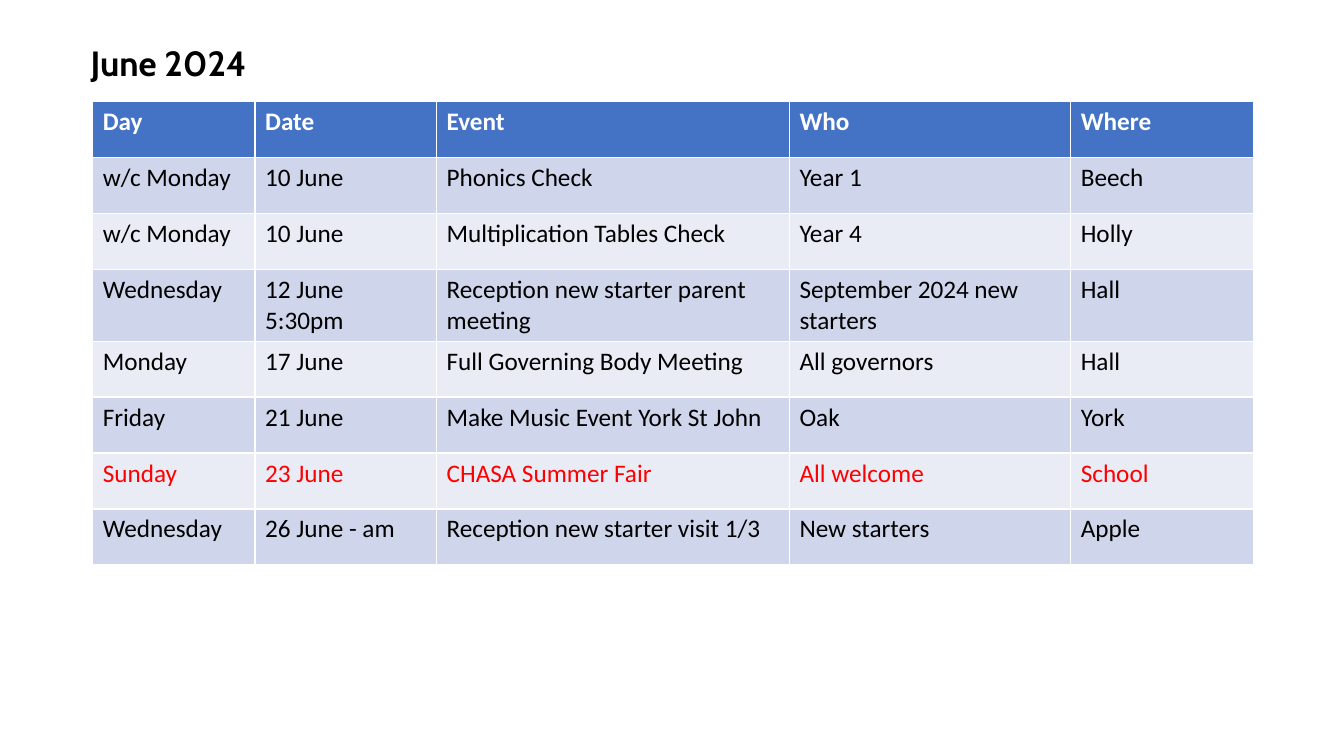
from pptx import Presentation
from pptx.dml.color import RGBColor
from pptx.enum.text import MSO_AUTO_SIZE
from pptx.util import Inches, Pt

BLACK = RGBColor(0x00, 0x00, 0x00)
WHITE = RGBColor(0xFF, 0xFF, 0xFF)
RED = RGBColor(0xFF, 0x00, 0x00)
HEADER_BLUE = RGBColor(0x44, 0x72, 0xC4)
BAND_DARK = RGBColor(0xCF, 0xD5, 0xEA)
BAND_LIGHT = RGBColor(0xE9, 0xEB, 0xF5)

COLUMN_WIDTHS = [1.61, 1.8, 3.5, 2.79, 1.81]
EVENTS = [
    ("Day", "Date", "Event", "Who", "Where"),
    ("w/c Monday", "10 June", "Phonics Check", "Year 1", "Beech"),
    ("w/c Monday", "10 June", "Multiplication Tables Check", "Year 4", "Holly"),
    ("Wednesday", "12 June\n5:30pm", "Reception new starter parent meeting",
     "September 2024 new starters", "Hall"),
    ("Monday", "17 June", "Full Governing Body Meeting", "All governors", "Hall"),
    ("Friday", "21 June", "Make Music Event York St John", "Oak", "York"),
    ("Sunday", "23 June", "CHASA Summer Fair", "All welcome", "School"),
    ("Wednesday", "26 June - am", "Reception new starter visit 1/3",
     "New starters", "Apple"),
]
HIGHLIGHTED_DAY = "Sunday"


def format_text(text_frame, font_name, size, color, bold):
    for para in text_frame.paragraphs:
        for span in para.runs:
            span.font.name = font_name
            span.font.size = Pt(size)
            span.font.color.rgb = color
            span.font.bold = bold


def add_month_title(page, text, left, top, width, height):
    box = page.shapes.add_textbox(left, top, width, height)
    box.text_frame.word_wrap = True
    box.text_frame.auto_size = MSO_AUTO_SIZE.SHAPE_TO_FIT_TEXT
    box.text_frame.text = text
    format_text(box.text_frame, "Cabin", 25, BLACK, True)


def row_colors(row_index, day):
    """Return the fill and text colours of a row."""
    if row_index == 0:
        return HEADER_BLUE, WHITE
    fill = BAND_DARK if row_index % 2 else BAND_LIGHT
    return fill, RED if day == HIGHLIGHTED_DAY else BLACK


def add_event_table(page, events, left, top, width, height):
    # The default table style supplies the white cell borders
    table = page.shapes.add_table(
        len(events), len(COLUMN_WIDTHS), left, top, width, height).table
    for column, column_width in zip(table.columns, COLUMN_WIDTHS):
        column.width = Inches(column_width)

    for row_index, event in enumerate(events):
        fill, text_color = row_colors(row_index, event[0])
        for column_index, text in enumerate(event):
            cell = table.cell(row_index, column_index)
            cell.fill.solid()
            cell.fill.fore_color.rgb = fill
            cell.text_frame.text = text
            format_text(cell.text_frame, "Calibri", 18, text_color, row_index == 0)


def main():
    deck = Presentation()
    deck.slide_width = Inches(13.33)
    deck.slide_height = Inches(7.5)
    page = deck.slides.add_slide(deck.slide_layouts[6])

    # Calendar table, then the month above it
    add_event_table(page, EVENTS, Inches(0.92), Inches(1.01),
                    Inches(sum(COLUMN_WIDTHS)), Inches(4.44))
    add_month_title(page, "June 2024", Inches(0.8), Inches(0.36),
                    Inches(4.45), Inches(0.52))
    deck.save("out.pptx")


if __name__ == "__main__":
    main()
